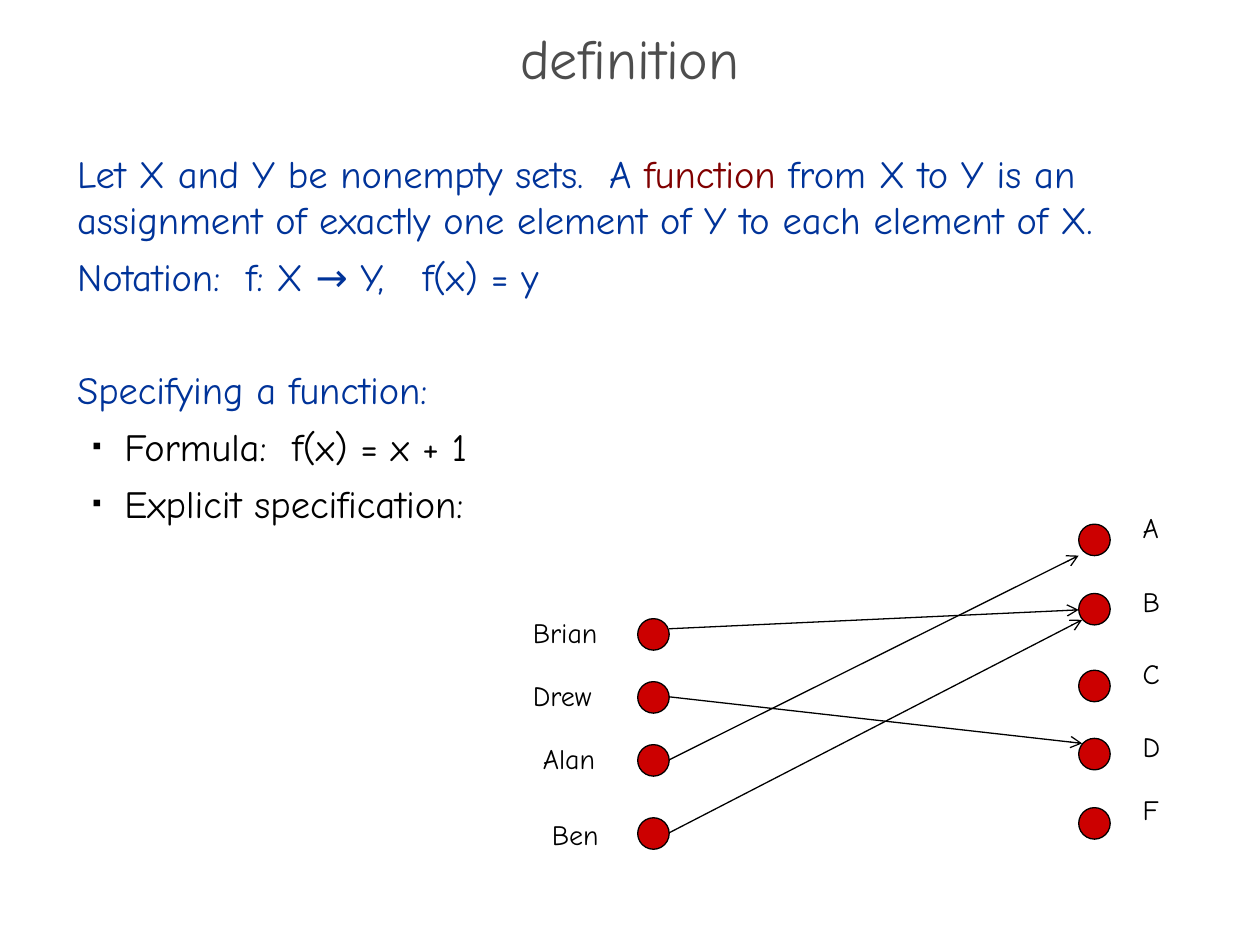
from lxml import etree
from pptx import Presentation
from pptx.dml.color import RGBColor
from pptx.enum.shapes import MSO_CONNECTOR, MSO_SHAPE
from pptx.enum.text import MSO_ANCHOR, MSO_AUTO_SIZE, PP_ALIGN
from pptx.oxml.ns import qn
from pptx.util import Pt

OVAL = MSO_SHAPE.OVAL
STRAIGHT = MSO_CONNECTOR.STRAIGHT
MIDDLE = MSO_ANCHOR.MIDDLE
CENTER = PP_ALIGN.CENTER
FIT_SHAPE = MSO_AUTO_SIZE.SHAPE_TO_FIT_TEXT

FONT = "Comic Neue"
BLACK, GRAY, BLUE, MAROON, RED = "000000", "4D4D4D", "003399", "800000", "CC0000"
DOT = 18
LINE_WIDTH = 0.75

# Diagram entries, relative to the diagram box: name, label left, label top, label width, dot top
DOMAIN_X, CODOMAIN_X = 67, 319
DOMAIN = [
    ("Brian", 0, 60.5, 54, 65.5),
    ("Drew", 0, 96.5, 54, 101.5),
    ("Alan", 5.8, 132.5, 47.5, 137.5),
    ("Ben", 10.8, 175.7, 41.8, 179.3),
]
CODOMAIN = [
    ("A", 348.5, 0, 27.4, 11.5),
    ("B", 348.5, 42.5, 27.4, 51.1),
    ("C", 348.5, 83.5, 27.4, 95),
    ("D", 348.5, 125.3, 27.4, 133.9),
    ("F", 348.5, 161.3, 26, 173.5),
]
# Start height, end left, end height
ARROWS = [(71.3, 319, 60.5), (110.2, 321, 136.8), (146.2, 319, 29.5), (187.9, 321, 66.2)]


def color(value):
    return RGBColor.from_string(value)


def style_run(run, size, value):
    run.font.name = FONT
    run.font.size = Pt(size)
    run.font.color.rgb = color(value)


def add_text_box(slide, left, top, width, height, wrap=True):
    shape = slide.shapes.add_textbox(Pt(left), Pt(top), Pt(width), Pt(height))
    shape.text_frame.word_wrap = wrap
    return shape.text_frame


def add_bullet(paragraph):
    properties = paragraph._p.get_or_add_pPr()
    properties.set("marL", str(Pt(27)))
    properties.set("indent", str(-Pt(18)))
    bullet_color = etree.SubElement(properties, qn("a:buClr"))
    etree.SubElement(bullet_color, qn("a:srgbClr"), val=BLACK)
    etree.SubElement(properties, qn("a:buSzPct"), val="35000")
    etree.SubElement(properties, qn("a:buFont"), typeface="Arial")
    etree.SubElement(properties, qn("a:buChar"), char="■")


def add_title(slide, left, top, width, height):
    text_frame = add_text_box(slide, left, top, width, height)
    text_frame.vertical_anchor = MIDDLE
    paragraph = text_frame.paragraphs[0]
    paragraph.text = "definition"
    paragraph.alignment = CENTER
    paragraph.line_spacing = 0.7
    style_run(paragraph.runs[0], 32, GRAY)


def add_body(slide, left, top, width, height):
    text_frame = add_text_box(slide, left, top, width, height)
    # Runs, space before, bulleted
    paragraphs = [
        ([("Let X and Y be nonempty sets.  A ", BLUE), ("function ", MAROON),
          ("from X to Y is an assignment of exactly one element of Y to each element of X.", BLUE)],
         0, False),
        ([("Notation:  f: X → Y,   f(x) = y", BLUE)], 0, False),
        ([("Specifying a function:", BLUE)], 32.5, False),
        ([("Formula:  f(x) = x + 1", BLACK)], 0, True),
        ([("Explicit specification:", BLACK)], 0, True),
    ]
    for index, (runs, space_before, bulleted) in enumerate(paragraphs):
        paragraph = text_frame.add_paragraph() if index else text_frame.paragraphs[0]
        paragraph.space_before = Pt(space_before)
        paragraph.space_after = Pt(6)
        if bulleted:
            add_bullet(paragraph)
        for text, value in runs:
            run = paragraph.add_run()
            run.text = text
            style_run(run, 22, value)


def add_dot(slide, left, top):
    dot = slide.shapes.add_shape(OVAL, Pt(left), Pt(top), Pt(DOT), Pt(DOT))
    dot.shadow.inherit = False
    dot.fill.solid()
    dot.fill.fore_color.rgb = color(RED)
    dot.line.color.rgb = color(BLACK)
    dot.line.width = Pt(LINE_WIDTH)


def add_label(slide, text, left, top, width, height):
    text_frame = add_text_box(slide, left, top, width, height, wrap=False)
    text_frame.auto_size = FIT_SHAPE
    text_frame.text = text
    style_run(text_frame.paragraphs[0].runs[0], 16, BLACK)


def add_arrow(slide, start_x, start_y, end_x, end_y):
    arrow = slide.shapes.add_connector(STRAIGHT, Pt(start_x), Pt(start_y), Pt(end_x), Pt(end_y))
    arrow.line.color.rgb = color(BLACK)
    arrow.line.width = Pt(LINE_WIDTH)
    etree.SubElement(arrow.line._get_or_add_ln(), qn("a:tailEnd"), type="arrow")
    etree.SubElement(arrow._element.spPr, qn("a:effectLst"))


def add_mapping(slide, left, top):
    # Both sets: dots with their names
    for entries, dot_x, label_height in ((DOMAIN, DOMAIN_X, 26.6), (CODOMAIN, CODOMAIN_X, 28.8)):
        for name, label_x, label_y, label_width, dot_y in entries:
            add_dot(slide, left + dot_x, top + dot_y)
            add_label(slide, name, left + label_x, top + label_y, label_width, label_height)
    # Assignments
    for start_y, end_x, end_y in ARROWS:
        add_arrow(slide, left + DOMAIN_X + DOT, top + start_y, left + end_x, top + end_y)


def main():
    presentation = Presentation()
    presentation.slide_width = Pt(720)
    presentation.slide_height = Pt(540)
    slide = presentation.slides.add_slide(presentation.slide_layouts[6])
    add_title(slide, 0, 19.5, 720, 36)
    add_body(slide, 37, 82, 648, 356)
    add_mapping(slide, 297.4, 288)
    presentation.save("out.pptx")


if __name__ == "__main__":
    main()
